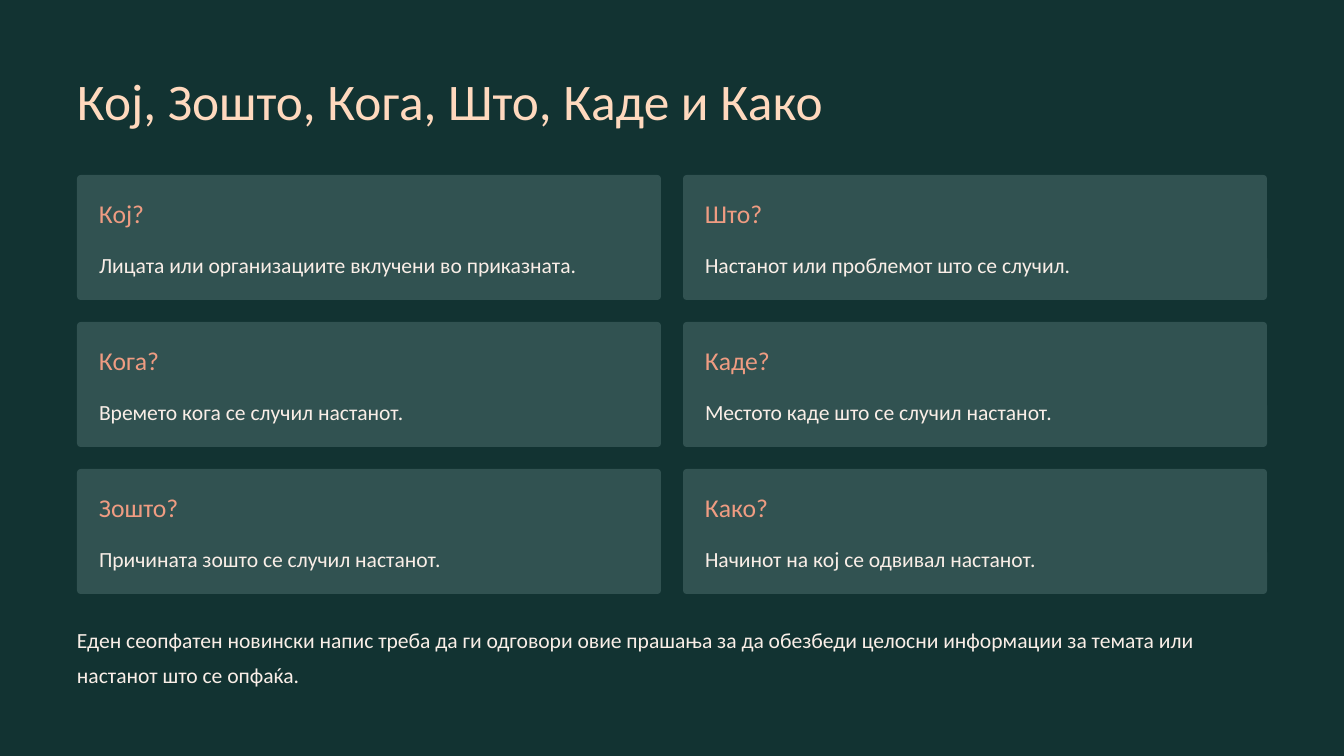
"""Build a slide on the six questions a news article answers."""
from dataclasses import dataclass

import pptx
import pptx.dml.color
import pptx.enum.shapes
import pptx.enum.text
import pptx.util
from pptx.shapes.base import BaseShape
from pptx.slide import Slide

PX = 914400 / 84


@dataclass(frozen=True)
class Theme:
    font: str = "Calibri"
    background: str = "123332"
    card: str = "315251"
    title: str = "FFD9BE"
    label: str = "EF9C82"
    body: str = "F9EEE7"
    title_size: float = 44
    label_size: float = 22
    body_size: float = 18.5
    title_leading: float = 55
    label_leading: float = 27.5
    body_leading: float = 30


@dataclass(frozen=True)
class Box:
    left: int
    top: int
    width: int
    height: int

    def emu(self) -> tuple[int, ...]:
        return tuple(round(v * PX) for v in (self.left, self.top, self.width, self.height))


@dataclass(frozen=True)
class Question:
    label: str
    answer: str


THEME = Theme()
TITLE = "Кој, Зошто, Кога, Што, Каде и Како"
SUMMARY = (
    "Еден сеопфатен новински напис треба да ги одговори овие прашања "
    "за да обезбеди целосни информации за темата или настанот што се опфаќа."
)
QUESTIONS = [
    Question("Кој?", "Лицата или организациите вклучени во приказната."),
    Question("Што?", "Настанот или проблемот што се случил."),
    Question("Кога?", "Времето кога се случил настанот."),
    Question("Каде?", "Местото каде што се случил настанот."),
    Question("Зошто?", "Причината зошто се случил настанот."),
    Question("Како?", "Начинот на кој се одвивал настанот."),
]
COLUMNS = 2
MARGIN, GRID_TOP = 77, 175
CARD_WIDTH, CARD_HEIGHT = 584, 125
GAP = PADDING = 22
CONTENT_WIDTH = COLUMNS * CARD_WIDTH + GAP


def rgb(value: str) -> pptx.dml.color.RGBColor:
    return pptx.dml.color.RGBColor.from_string(value)


def write(sp: BaseShape, text: str, *, size: float, color: str,
          leading: float, wrap: bool = True) -> None:
    tf = sp.text_frame
    tf.margin_left = tf.margin_top = tf.margin_right = tf.margin_bottom = 0
    tf.auto_size = pptx.enum.text.MSO_AUTO_SIZE.NONE
    tf.vertical_anchor = pptx.enum.text.MSO_ANCHOR.TOP
    tf.word_wrap = wrap
    p = tf.paragraphs[0]
    p.alignment = pptx.enum.text.PP_ALIGN.LEFT
    p.line_spacing = pptx.util.Pt(leading)
    r = p.add_run()
    r.text = text
    r.font.name = THEME.font
    r.font.size = pptx.util.Pt(size)
    r.font.color.rgb = rgb(color)


def add_title(s: Slide, box: Box) -> None:
    sp = s.shapes.title
    sp.left, sp.top, sp.width, sp.height = box.emu()
    write(sp, TITLE, size=THEME.title_size, color=THEME.title, leading=THEME.title_leading)


def add_label(s: Slide, text: str, box: Box) -> None:
    write(s.shapes.add_textbox(*box.emu()), text, size=THEME.label_size,
          color=THEME.label, leading=THEME.label_leading, wrap=False)


def add_body(s: Slide, text: str, box: Box, wrap: bool) -> None:
    write(s.shapes.add_textbox(*box.emu()), text, size=THEME.body_size,
          color=THEME.body, leading=THEME.body_leading, wrap=wrap)


def add_card(s: Slide, question: Question, box: Box) -> None:
    sp = s.shapes.add_shape(pptx.enum.shapes.MSO_SHAPE.ROUNDED_RECTANGLE, *box.emu())
    sp.adjustments[0] = 0.03
    sp.shadow.inherit = False
    sp.fill.solid()
    sp.fill.fore_color.rgb = rgb(THEME.card)
    sp.line.fill.background()
    left = box.left + PADDING
    add_label(s, question.label, Box(left, box.top + PADDING, 259, 32))
    add_body(s, question.answer,
             Box(left, box.top + 68, box.width - 2 * PADDING, 35), wrap=False)


def main() -> None:
    prs = pptx.Presentation()
    prs.slide_width = pptx.util.Inches(16)
    prs.slide_height = pptx.util.Inches(9)
    s = prs.slides.add_slide(prs.slide_layouts.get_by_name("Title Only"))
    s.background.fill.solid()
    s.background.fill.fore_color.rgb = rgb(THEME.background)
    add_title(s, Box(MARGIN, 67, CONTENT_WIDTH, 65))
    for i, question in enumerate(QUESTIONS):
        row, column = divmod(i, COLUMNS)
        add_card(s, question, Box(MARGIN + column * (CARD_WIDTH + GAP),
                                  GRID_TOP + row * (CARD_HEIGHT + GAP),
                                  CARD_WIDTH, CARD_HEIGHT))
    add_body(s, SUMMARY, Box(MARGIN, 618, CONTENT_WIDTH, 71), wrap=True)
    prs.save("out.pptx")


if __name__ == "__main__":
    main()
